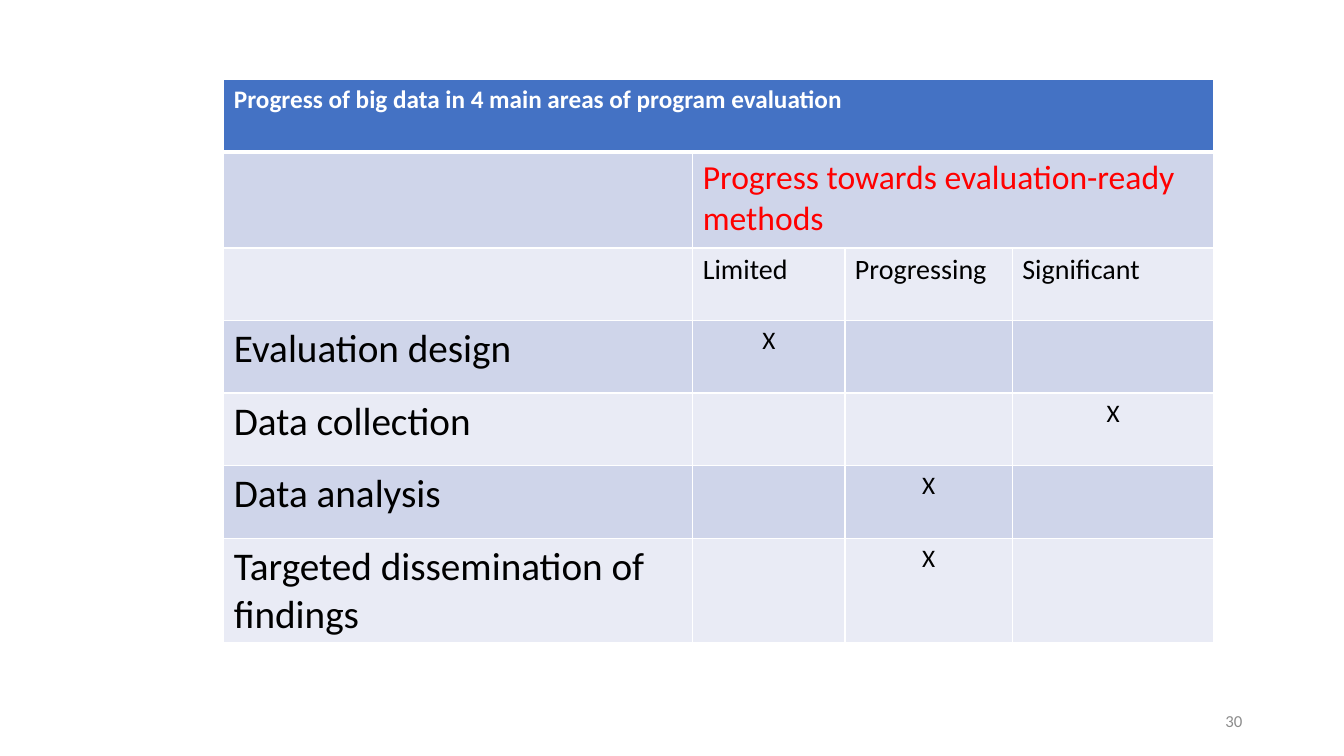
from dataclasses import dataclass

from lxml.etree import SubElement
from pptx import Presentation
from pptx.dml.color import RGBColor
from pptx.enum.text import MSO_ANCHOR, PP_ALIGN
from pptx.oxml.ns import qn
from pptx.table import _Cell
from pptx.text.text import TextFrame
from pptx.util import Inches, Pt

WHITE = RGBColor(0xFF, 0xFF, 0xFF)
BLACK = RGBColor(0x00, 0x00, 0x00)
RED = RGBColor(0xFF, 0x00, 0x00)
GRAY = RGBColor(0x8C, 0x8C, 0x8C)
HEADER_BLUE = RGBColor(0x44, 0x72, 0xC4)
BAND_DARK = RGBColor(0xCF, 0xD5, 0xEA)
BAND_LIGHT = RGBColor(0xE9, 0xEB, 0xF5)

COLUMN_WIDTHS = (4.65, 1.51, 1.66, 2)
ROW_HEIGHTS = (0.72, 0.95, 0.72, 0.72, 0.72, 0.72, 0.75)
RATINGS = ("Limited", "Progressing", "Significant")
FIRST_AREA_ROW = 3


@dataclass(frozen=True)
class Area:
    name: str
    rating: str


AREAS = (
    Area("Evaluation design", "Limited"),
    Area("Data collection", "Significant"),
    Area("Data analysis", "Progressing"),
    Area("Targeted dissemination of findings", "Progressing"),
)


def write(frame: TextFrame, text: str, *, size: float, color: RGBColor = BLACK,
          bold: bool = False, align: PP_ALIGN = PP_ALIGN.LEFT) -> None:
    para = frame.paragraphs[0]
    para.alignment = align
    span = para.add_run()
    span.text = text
    span.font.name = "Calibri"
    span.font.size = Pt(size)
    span.font.bold = bold
    span.font.color.rgb = color


def add_borders(cell: _Cell, top: float, bottom: float) -> None:
    """Draw white cell edges, with widths in points; the sides are 1 pt."""
    properties = cell._tc.get_or_add_tcPr()
    edges = (("a:lnL", 1), ("a:lnR", 1), ("a:lnT", top), ("a:lnB", bottom))
    for position, (tag, width) in enumerate(edges):
        line = SubElement(properties, qn(tag), w=str(Pt(width)))
        fill = SubElement(line, qn("a:solidFill"))
        SubElement(fill, qn("a:srgbClr"), val=str(WHITE))
        properties.insert(position, line)


def row_color(row: int) -> RGBColor:
    if row == 0:
        return HEADER_BLUE
    return BAND_DARK if row % 2 else BAND_LIGHT


def add_progress_table(page) -> None:
    table = page.shapes.add_table(
        len(ROW_HEIGHTS), len(COLUMN_WIDTHS), Inches(2.22), Inches(0.79),
        Inches(sum(COLUMN_WIDTHS)), Inches(sum(ROW_HEIGHTS))).table
    for column, width in zip(table.columns, COLUMN_WIDTHS):
        column.width = Inches(width)
    for number, (row, height) in enumerate(zip(table.rows, ROW_HEIGHTS)):
        row.height = Inches(height)
        for cell in row.cells:
            cell.fill.solid()
            cell.fill.fore_color.rgb = row_color(number)
            add_borders(cell, top=3 if number == 1 else 1, bottom=3 if number == 0 else 1)

    table.cell(0, 0).merge(table.cell(0, 3))
    table.cell(1, 1).merge(table.cell(1, 3))
    write(table.cell(0, 0).text_frame,
          "Progress of big data in 4 main areas of program evaluation",
          size=18, color=WHITE, bold=True)
    write(table.cell(1, 1).text_frame, "Progress towards evaluation-ready methods",
          size=24, color=RED)
    for column, rating in enumerate(RATINGS, start=1):
        write(table.cell(2, column).text_frame, rating, size=20)
    for row, area in enumerate(AREAS, start=FIRST_AREA_ROW):
        write(table.cell(row, 0).text_frame, area.name, size=28)
        mark = table.cell(row, 1 + RATINGS.index(area.rating))
        write(mark.text_frame, "X", size=18, align=PP_ALIGN.CENTER)


def add_page_number(page) -> None:
    box = page.shapes.add_textbox(Inches(9.42), Inches(6.95), Inches(3), Inches(0.4))
    box.text_frame.word_wrap = True
    box.text_frame.vertical_anchor = MSO_ANCHOR.MIDDLE
    write(box.text_frame, "30", size=12, color=GRAY, align=PP_ALIGN.RIGHT)


def main() -> None:
    deck = Presentation()
    deck.slide_width, deck.slide_height = Inches(13.33), Inches(7.5)
    page = deck.slides.add_slide(deck.slide_layouts[6])
    add_page_number(page)
    add_progress_table(page)
    deck.save("out.pptx")


if __name__ == "__main__":
    main()
